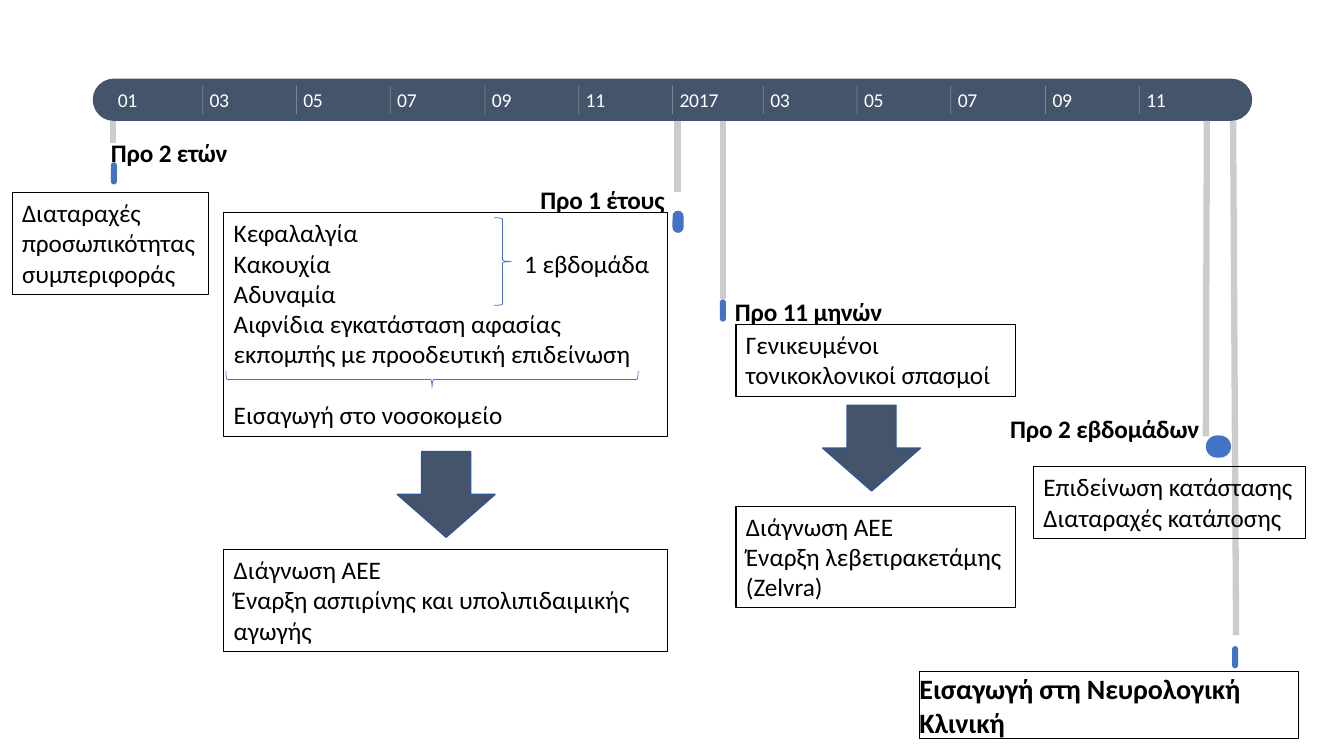
import lxml.etree
import pptx
import pptx.dml.color
import pptx.enum.shapes
import pptx.enum.text
import pptx.oxml.ns
import pptx.util

PX = 9144  # EMU in one px, at 100 px to the inch
SHAPES = pptx.enum.shapes.MSO_SHAPE
NAVY, BLUE, GREY, WHITE, BLACK = "44546A", "4472C4", "CCCCCC", "FFFFFF", "000000"

# Days from the start of the timeline to each month mark
MONTHS = [(0, "01"), (60, "03"), (121, "05"), (182, "07"), (244, "09"), (305, "11"),
          (366, "2017"), (425, "03"), (486, "05"), (547, "07"), (609, "09"), (670, "11")]
TIMELINE_START = 110
PX_PER_DAY = 1.522


def color(hex_string):
    return pptx.dml.color.RGBColor.from_string(hex_string)


def lengths(*values):
    return [pptx.util.Emu(value * PX) for value in values]


def add_child(parent, tag, **attributes):
    child = lxml.etree.SubElement(parent, pptx.oxml.ns.qn(tag))
    for name, value in attributes.items():
        child.set(name, str(value))
    return child


def write(box, text, size=18, bold=False, ink=BLACK, spacing=0, middle=False,
          inset=True, wrap=True, grow=True, tab=None):
    """Fill a box with one paragraph per line; spacing is in hundredths of a point."""
    frame = box.text_frame
    frame.word_wrap = wrap
    auto = pptx.enum.text.MSO_AUTO_SIZE
    frame.auto_size = auto.SHAPE_TO_FIT_TEXT if grow else auto.NONE
    anchor = pptx.enum.text.MSO_ANCHOR
    frame.vertical_anchor = anchor.MIDDLE if middle else anchor.TOP
    if not inset:
        frame.margin_left = frame.margin_right = 0
        frame.margin_top = frame.margin_bottom = 0
    for index, line in enumerate(text.split("\n")):
        para = frame.add_paragraph() if index else frame.paragraphs[0]
        span = para.add_run()
        span.text = line
        span.font.name = "Calibri"
        span.font.size = pptx.util.Pt(size)
        span.font.bold = bold
        span.font.color.rgb = color(ink)
        if spacing:
            span.font._element.set("spc", str(spacing))
        if tab and "\t" in line:
            stops = add_child(para._p.get_or_add_pPr(), "a:tabLst")
            add_child(stops, "a:tab", pos=tab * PX, algn="l")


class Timeline:
    def __init__(self, deck):
        self.shapes = deck.slides.add_slide(deck.slide_layouts[6]).shapes

    def shape(self, kind, left, top, width, height, fill=None, line=None, weight=1):
        shape = self.shapes.add_shape(kind, *lengths(left, top, width, height))
        shape.shadow.inherit = False
        if fill:
            shape.fill.solid()
            shape.fill.fore_color.rgb = color(fill)
        else:
            shape.fill.background()
        if line:
            shape.line.color.rgb = color(line)
            shape.line.width = pptx.util.Pt(weight)
        else:
            shape.line.fill.background()
        return shape

    def pill(self, left, top, width, height, fill):
        pill = self.shape(SHAPES.ROUNDED_RECTANGLE, left, top, width, height, fill)
        pill.adjustments[0] = 0.5
        return pill

    def marker(self, left, top, width=6):
        return self.pill(left, top, width, 22, BLUE)

    def arrow(self, left, top):
        return self.shape(SHAPES.DOWN_ARROW, left, top, 97, 85, NAVY, "325491")

    def brace(self, left, top, width, height, rotation=0):
        brace = self.shape(SHAPES.RIGHT_BRACE, left, top, width, height,
                           line=BLUE, weight=0.5)
        brace.rotation = rotation

    def line(self, x1, y1, x2, y2, ink, weight, alpha=None):
        line = self.shapes.add_connector(pptx.enum.shapes.MSO_CONNECTOR.STRAIGHT,
                                         *lengths(x1, y1, x2, y2))
        line.line.color.rgb = color(ink)
        line.line.width = pptx.util.Pt(weight)
        properties = line._element.spPr
        if alpha:
            fill = properties.find(".//" + pptx.oxml.ns.qn("a:srgbClr"))
            add_child(fill, "a:alpha", val=alpha * 1000)
        add_child(properties, "a:effectLst")
        return line

    def stem(self, x, bottom, drift=0):
        """Hang a grey line from the bar; drift shifts its lower end sideways."""
        return self.line(x, 120, x + drift, bottom, GREY, 4.5)

    def text(self, left, top, width, height, text, framed=False, **style):
        box = self.shapes.add_textbox(*lengths(left, top, width, height))
        if framed:
            box.line.color.rgb = color(BLACK)
            box.line.width = pptx.util.Pt(0.75)
        write(box, text, **style)

    def heading(self, left, top, width, text, height=30, **style):
        self.text(left, top, width, height, text, bold=True, spacing=-10,
                  middle=True, inset=False, **style)

    def note(self, left, top, width, height, text, **style):
        self.text(left, top, width, height, text, framed=True, **style)

    def month(self, days, name):
        x = round(TIMELINE_START + days * PX_PER_DAY)
        if days:
            self.line(x, 85, x, 113, WHITE, 0.5, alpha=30)
        self.text(x + 7, 89, 33 if len(name) > 2 else 17, 20, name, size=14, ink=WHITE,
                  spacing=-30 if len(name) == 2 else -20, middle=True,
                  inset=False, wrap=False, grow=False)


def main():
    deck = pptx.Presentation()
    deck.slide_width, deck.slide_height = lengths(1333, 750)
    slide = Timeline(deck)

    slide.pill(92, 78, 1150, 42, NAVY)
    for days, name in MONTHS:
        slide.month(days, name)

    # 11 months before
    seizure_marker = slide.marker(714, 297)
    slide.stem(717, 297).end_connect(seizure_marker, 0)
    slide.heading(729, 294, 156, "Προ 11 μηνών")

    # Admission
    slide.marker(1222, 641)
    slide.stem(1223, 630, drift=3)
    slide.heading(912, 666, 376, "Εισαγωγή στη Νευρολογική Κλινική", height=67,
                  size=20, framed=True)

    # 2 years before
    slide.stem(112, 142)
    slide.marker(110, 161)
    slide.heading(110, 136, 125, "Προ 2 ετών")
    slide.note(12, 191, 195, 101, "Διαταραχές προσωπικότητας συμπεριφοράς")

    # 1 year before
    slide.stem(672, 190)
    slide.marker(667, 209, 11)
    slide.heading(536, 183, 135, "Προ 1 έτους")
    slide.note(222, 211, 440, 222,
               "Κεφαλαλγία\nΚακουχία\t1 εβδομάδα\nΑδυναμία\n"
               "Αιφνίδια εγκατάσταση αφασίας εκπομπής με προοδευτική επιδείνωση\n"
               "Εισαγωγή στο νοσοκομείο", tab=288)
    symptoms = slide.shapes[-1].text_frame
    symptoms.paragraphs[-1].space_before = pptx.util.Pt(22)
    slide.brace(490, 216, 17, 87)
    slide.brace(420, 172, 17, 409, rotation=90)

    slide.note(730, 322, 277, 71, "Γενικευμένοι τονικοκλονικοί σπασμοί")
    slide.arrow(394, 448)
    slide.note(222, 545, 440, 101,
               "Διάγνωση ΑΕΕ\nΈναρξη ασπιρίνης και υπολιπιδαιμικής αγωγής")
    slide.arrow(816, 402)
    slide.note(730, 502, 277, 101,
               "Διάγνωση ΑΕΕ\nΈναρξη λεβετιρακετάμης\n(Zelvra)", wrap=False)

    # 2 weeks before
    slide.stem(1197, 433, drift=-1)
    slide.marker(1196, 432, 25)
    slide.heading(1002, 410, 194, "Προ 2 εβδομάδων")
    slide.note(1025, 463, 270, 71, "Επιδείνωση κατάστασης\nΔιαταραχές κατάποσης",
               wrap=False)

    deck.save("out.pptx")


if __name__ == "__main__":
    main()
